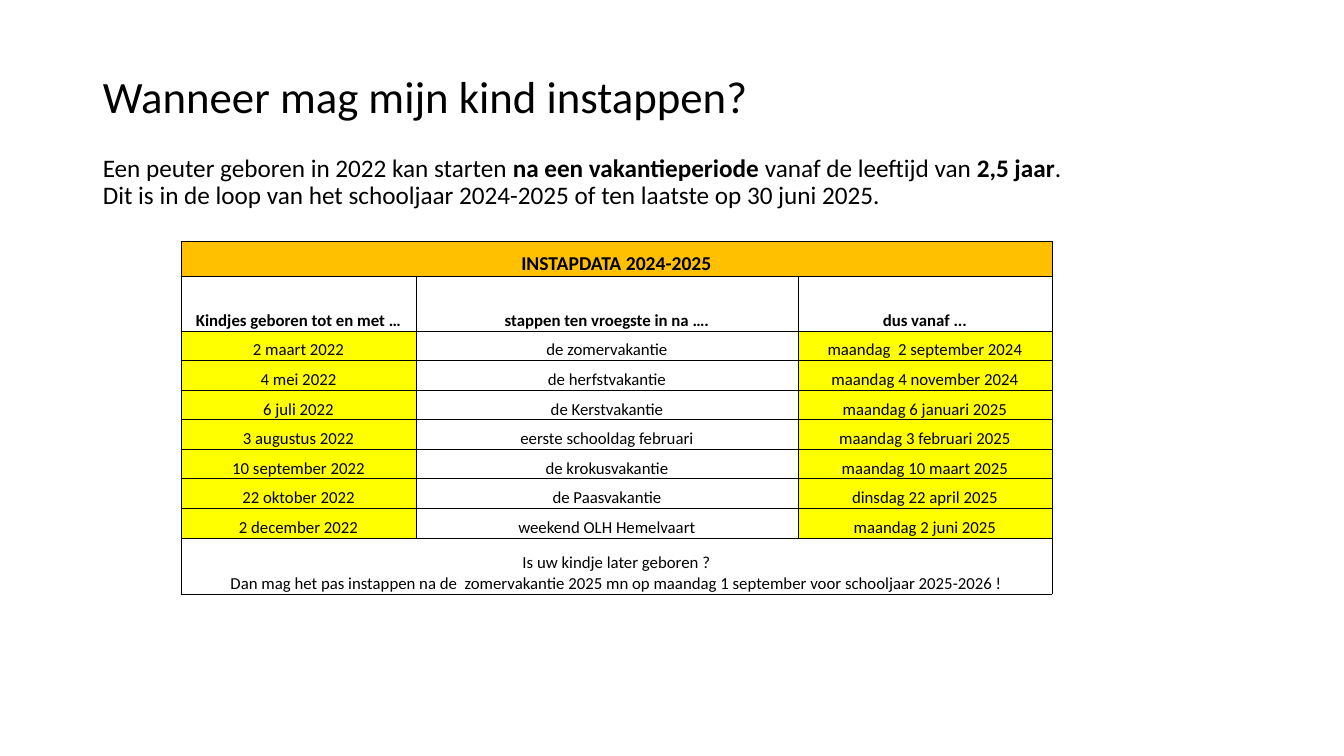
from lxml import etree
from pptx import Presentation
from pptx.dml.color import RGBColor
from pptx.enum.text import MSO_ANCHOR, PP_ALIGN
from pptx.oxml.ns import qn
from pptx.util import Pt

TOP, BOTTOM = MSO_ANCHOR.TOP, MSO_ANCHOR.BOTTOM
LEFT, CENTER = PP_ALIGN.LEFT, PP_ALIGN.CENTER
COLORS = {"ink": "000000", "head": "FFC000", "date": "FFFF00"}
FONT = "Calibri"
SIDES = ("a:lnL", "a:lnR", "a:lnT", "a:lnB")


def px(count):
    return round(count * 914400 / 100.8)


def write(frame, parts, size=12, bold=False, align=LEFT, spacing=1.0):
    """Fill a frame with (text, bold) parts, or with one plain string."""
    para = frame.paragraphs[0]
    para.alignment = align
    para.line_spacing = spacing
    if isinstance(parts, str):
        parts = [(parts, bold)]
    for text, heavy in parts:
        for index, line in enumerate(text.split("\n")):
            if index:
                para.add_line_break()
            run = para.add_run()
            run.text = line
            run.font.name = FONT
            run.font.size = Pt(size)
            run.font.bold = heavy
            run.font.color.rgb = RGBColor.from_string(COLORS["ink"])


class Page:
    def __init__(self, deck):
        self.slide = deck.slides.add_slide(deck.slide_layouts[6])

    def text(self, box, parts, anchor=TOP, **style):
        frame = self.slide.shapes.add_textbox(*map(px, box)).text_frame
        frame.word_wrap = True
        frame.vertical_anchor = anchor
        write(frame, parts, **style)

    def table(self, left, top, widths, heights):
        shape = self.slide.shapes.add_table(
            len(heights), len(widths), px(left), px(top),
            px(sum(widths)), px(sum(heights)))
        table = shape.table
        table.first_row = table.horz_banding = False
        for column, width in zip(table.columns, widths):
            column.width = px(width)
        for row, height in zip(table.rows, heights):
            row.height = px(height)
        for cell in table.iter_cells():
            self.border(cell)
            cell.fill.background()
        return table

    def border(self, cell):
        props = cell._tc.get_or_add_tcPr()
        for side in SIDES:
            line = etree.SubElement(props, qn(side), w=str(Pt(0.5)))
            fill = etree.SubElement(line, qn("a:solidFill"))
            etree.SubElement(fill, qn("a:srgbClr"), val=COLORS["ink"])

    def cell(self, cell, text, fill=None, **style):
        cell.margin_left = cell.margin_right = cell.margin_top = px(1)
        cell.margin_bottom = 0
        cell.vertical_anchor = BOTTOM
        if fill:
            cell.fill.solid()
            cell.fill.fore_color.rgb = RGBColor.from_string(COLORS[fill])
        write(cell.text_frame, text, align=CENTER, **style)


HEADS = ("Kindjes geboren tot en met …", "stappen ten vroegste in na ….",
         "dus vanaf ...")
DATES = [
    ("2 maart 2022", "de zomervakantie", "maandag  2 september 2024"),
    ("4 mei 2022", "de herfstvakantie", "maandag 4 november 2024"),
    ("6 juli 2022", "de Kerstvakantie", "maandag 6 januari 2025"),
    ("3 augustus 2022", "eerste schooldag februari", "maandag 3 februari 2025"),
    ("10 september 2022", "de krokusvakantie", "maandag 10 maart 2025"),
    ("22 oktober 2022", "de Paasvakantie", "dinsdag 22 april 2025"),
    ("2 december 2022", "weekend OLH Hemelvaart", "maandag 2 juni 2025"),
]
FILLS = ("date", None, "date")


def main():
    deck = Presentation()
    deck.slide_width, deck.slide_height = px(1344), px(756)
    page = Page(deck)

    # Title and introduction
    page.text((93, 50, 1218, 78), "Wanneer mag mijn kind instappen?",
              anchor=BOTTOM, size=32, spacing=0.9)
    page.text((93, 151, 1218, 420), [
        ("Een peuter geboren in 2022 kan starten ", False),
        ("na een vakantieperiode", True),
        (" vanaf de leeftijd van ", False),
        ("2,5 jaar", True),
        (".\nDit is in de loop van het schooljaar 2024-2025 "
         "of ten laatste op 30 juni 2025.", False),
    ], size=18, spacing=0.9)

    # Table grid: the date rows share 207 px equally
    heights = [35, 55] + [207 / len(DATES)] * len(DATES) + [56]
    table = page.table(181, 241, (235, 382, 254), heights)
    last = len(heights) - 1
    for row in (0, last):
        table.cell(row, 0).merge(table.cell(row, 2))

    # Table text
    page.cell(table.cell(0, 0), "INSTAPDATA 2024-2025", "head",
              size=14, bold=True)
    for col, head in enumerate(HEADS):
        page.cell(table.cell(1, col), head, bold=True)
    for row, dates in enumerate(DATES, 2):
        for col, (text, fill) in enumerate(zip(dates, FILLS)):
            page.cell(table.cell(row, col), text, fill)
    page.cell(table.cell(last, 0),
              "Is uw kindje later geboren ?\n"
              "Dan mag het pas instappen na de  zomervakantie 2025 mn op "
              "maandag 1 september voor schooljaar 2025-2026 !")

    deck.save("out.pptx")


if __name__ == "__main__":
    main()
